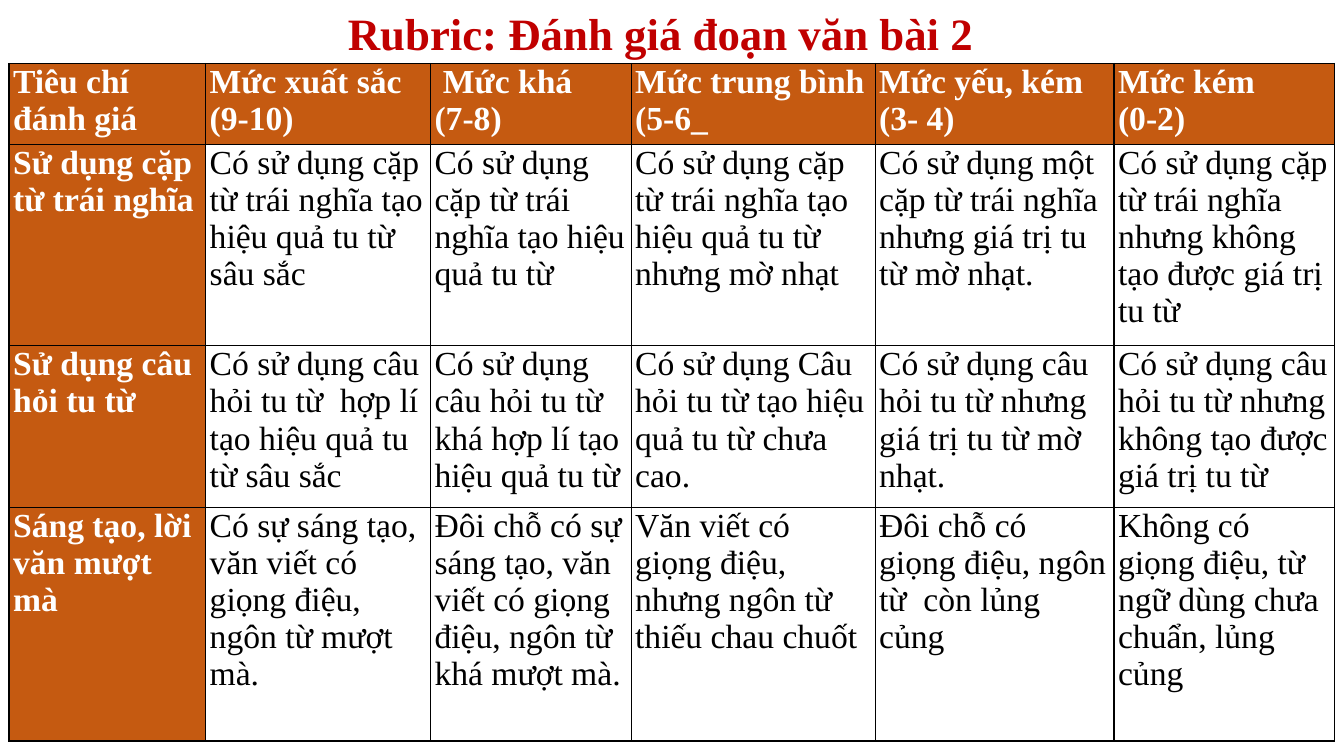
from lxml import etree
from pptx import Presentation, util as u
from pptx.dml.color import RGBColor
from pptx.enum import text
from pptx.oxml.ns import qn

RED = RGBColor(0xC0, 0x00, 0x00)
ORANGE = RGBColor(0xC5, 0x5A, 0x11)
WHITE = RGBColor(0xFF, 0xFF, 0xFF)
BLACK = RGBColor(0x00, 0x00, 0x00)

COLUMN_WIDTHS = [1.95, 2.23, 1.99, 2.42, 2.37, 2.19]
ROW_HEIGHTS = [0.77, 1.93, 1.33, 2.32]
RUBRIC = [
    ["Tiêu chí đánh giá", "Mức xuất sắc\n(9-10)", " Mức khá\n(7-8)",
     "Mức trung bình\n(5-6_", "Mức yếu, kém\n(3- 4)", "Mức kém\n(0-2)"],
    ["Sử dụng cặp từ trái nghĩa",
     "Có sử dụng cặp từ trái nghĩa tạo hiệu quả tu từ sâu sắc",
     "Có sử dụng cặp từ trái nghĩa tạo hiệu quả tu từ",
     "Có sử dụng cặp từ trái nghĩa tạo hiệu quả tu từ nhưng mờ nhạt",
     "Có sử dụng một cặp từ trái nghĩa nhưng giá trị tu từ mờ nhạt.",
     "Có sử dụng cặp từ trái nghĩa nhưng không tạo được giá trị tu từ"],
    ["Sử dụng câu hỏi tu từ",
     "Có sử dụng câu hỏi tu từ  hợp lí tạo hiệu quả tu từ sâu sắc",
     "Có sử dụng câu hỏi tu từ khá hợp lí tạo hiệu quả tu từ",
     "Có sử dụng Câu hỏi tu từ tạo hiệu quả tu từ chưa cao.",
     "Có sử dụng câu hỏi tu từ nhưng giá trị tu từ mờ nhạt.",
     "Có sử dụng câu hỏi tu từ nhưng không tạo được giá trị tu từ"],
    ["Sáng tạo, lời văn mượt mà",
     "Có sự sáng tạo, văn viết có giọng điệu, ngôn từ mượt mà.",
     "Đôi chỗ có sự sáng tạo, văn viết có giọng điệu, ngôn từ khá mượt mà.",
     "Văn viết có giọng điệu, nhưng ngôn từ thiếu chau chuốt",
     "Đôi chỗ có giọng điệu, ngôn từ  còn lủng củng",
     "Không có giọng điệu, từ ngữ dùng chưa chuẩn, lủng củng"],
]


def style_font(paragraph, size, color, bold):
    font = paragraph.font
    font.name = "Times New Roman"
    font.size = u.Pt(size)
    font.color.rgb = color
    font.bold = bold


def add_borders(cell):
    """Draw a thin black line on all four sides; call before filling the cell."""
    properties = cell._tc.get_or_add_tcPr()
    for side in ("lnL", "lnR", "lnT", "lnB"):
        line = etree.SubElement(properties, qn(f"a:{side}"), w=str(u.Pt(1)))
        fill = etree.SubElement(line, qn("a:solidFill"))
        etree.SubElement(fill, qn("a:srgbClr"), val=str(BLACK))


presentation = Presentation()
presentation.slide_width = u.Inches(13.33)
presentation.slide_height = u.Inches(7.5)
slide = presentation.slides.add_slide(presentation.slide_layouts[5])

title = slide.shapes.title
title.left, title.top = u.Inches(3.35), 0
title.width, title.height = u.Inches(7.25), u.Inches(0.64)
title.text_frame.text = "Rubric: Đánh giá đoạn văn bài 2"
title.text_frame.vertical_anchor = text.MSO_ANCHOR.MIDDLE
title.text_frame.auto_size = text.MSO_AUTO_SIZE.SHAPE_TO_FIT_TEXT
heading = title.text_frame.paragraphs[0]
heading.alignment = text.PP_ALIGN.LEFT
style_font(heading, 32, RED, True)

table = slide.shapes.add_table(
    len(ROW_HEIGHTS), len(COLUMN_WIDTHS), u.Inches(0.09), u.Inches(0.63),
    u.Inches(sum(COLUMN_WIDTHS)), u.Inches(sum(ROW_HEIGHTS))).table
table.first_row = table.horz_banding = False
for column, width in zip(table.columns, COLUMN_WIDTHS):
    column.width = u.Inches(width)
for row, height in zip(table.rows, ROW_HEIGHTS):
    row.height = u.Inches(height)

for row_index, row_texts in enumerate(RUBRIC):
    for column_index, cell_text in enumerate(row_texts):
        is_header = row_index == 0 or column_index == 0
        cell = table.cell(row_index, column_index)
        cell.text = cell_text
        cell.margin_left = cell.margin_right = u.Inches(0.04)
        cell.margin_top = cell.margin_bottom = 0
        add_borders(cell)
        if is_header:
            cell.fill.solid()
            cell.fill.fore_color.rgb = ORANGE
        else:
            cell.fill.background()
        for paragraph in cell.text_frame.paragraphs:
            style_font(paragraph, 24, WHITE if is_header else BLACK, is_header)

presentation.save("out.pptx")
